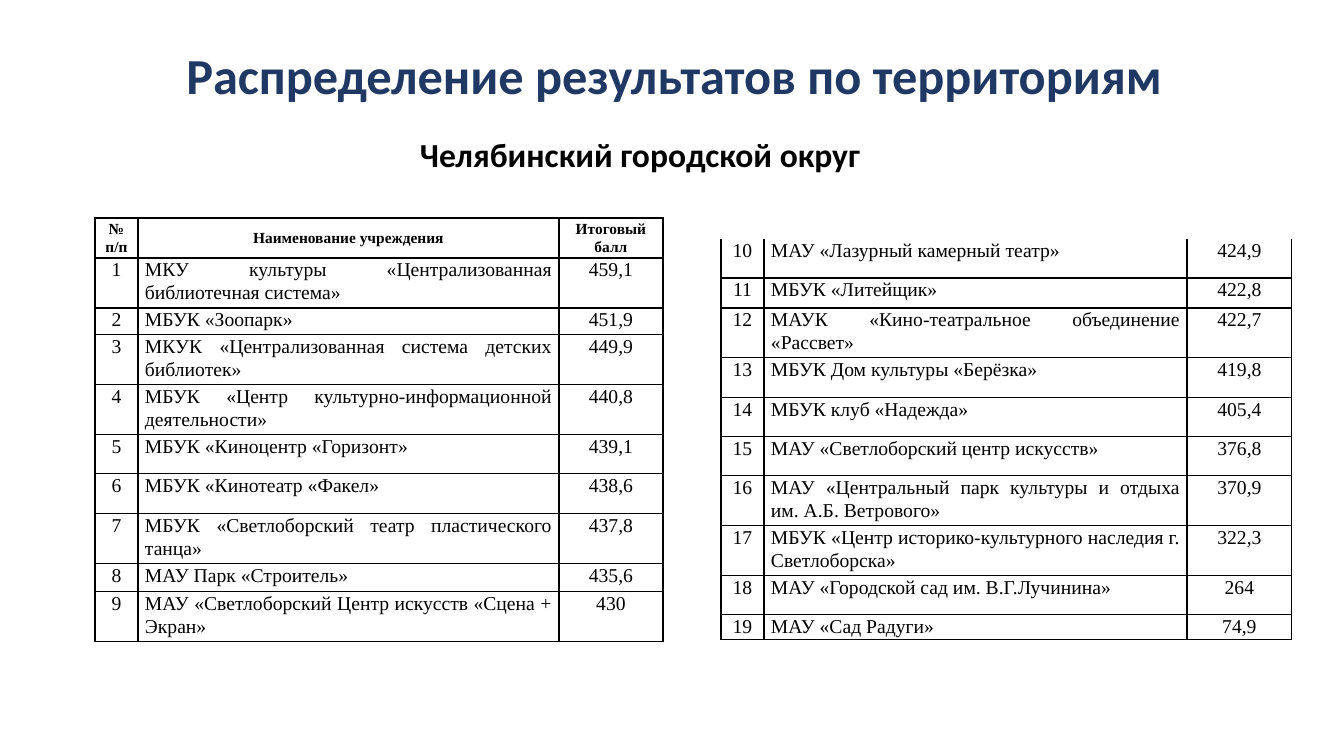
from pptx import Presentation
from pptx.dml.color import RGBColor
from pptx.enum.text import MSO_ANCHOR, PP_ALIGN
from pptx.util import Pt
from pptx.oxml import parse_xml
from pptx.oxml.ns import nsdecls

PX = 914400 / 100.8
NAVY = RGBColor(0x20, 0x38, 0x64)
BLACK = RGBColor(0, 0, 0)
SERIF = "Times New Roman"


def px(n):
    return round(n * PX)


def write(frame, text, size=14, font=SERIF, color=BLACK, bold=False,
          align=PP_ALIGN.CENTER, lead=1.06, before=0):
    para = frame.paragraphs[0]
    para.alignment = align
    para.line_spacing = lead
    para.space_before = Pt(before)
    run = para.add_run()
    run.text = text
    run.font.size = Pt(size)
    run.font.name = font
    run.font.bold = bold
    run.font.color.rgb = color


deck = Presentation()
deck.slide_width, deck.slide_height = px(1344), px(756)
slide = deck.slides.add_slide(deck.slide_layouts[6])

# Title and subtitle
heads = [
    ("Распределение результатов по территориям", (95, 35, 1159, 87),
     MSO_ANCHOR.MIDDLE, 36, NAVY, 0),
    ("Челябинский городской округ", (144, 120, 992, 60),
     MSO_ANCHOR.BOTTOM, 24, BLACK, 10),
]
for text, place, anchor, size, color, before in heads:
    frame = slide.shapes.add_textbox(*map(px, place)).text_frame
    frame.word_wrap = True
    frame.vertical_anchor = anchor
    write(frame, text, size=size, font="Calibri", color=color, bold=True,
          lead=0.9, before=before)

# Rows: height, number, name, score
left = [
    (40, "№ п/п", "Наименование учреждения", "Итоговый балл"),
    (50, "1", "МКУ культуры «Централизованная библиотечная система»", "459,1"),
    (27, "2", "МБУК «Зоопарк»", "451,9"),
    (50, "3", "МКУК «Централизованная система детских библиотек»", "449,9"),
    (49, "4", "МБУК «Центр культурно-информационной деятельности»", "440,8"),
    (39, "5", "МБУК «Киноцентр «Горизонт»", "439,1"),
    (40, "6", "МБУК «Кинотеатр «Факел»", "438,6"),
    (49, "7", "МБУК «Светлоборский театр пластического танца»", "437,8"),
    (28, "8", "МАУ Парк «Строитель»", "435,6"),
    (50, "9", "МАУ «Светлоборский Центр искусств «Сцена + Экран»", "430"),
]
right = [
    (39, "10", "МАУ «Лазурный камерный театр»", "424,9"),
    (30, "11", "МБУК «Литейщик»", "422,8"),
    (50, "12", "МАУК «Кино-театральное объединение «Рассвет»", "422,7"),
    (40, "13", "МБУК Дом культуры «Берёзка»", "419,8"),
    (39, "14", "МБУК клуб «Надежда»", "405,4"),
    (39, "15", "МАУ «Светлоборский центр искусств»", "376,8"),
    (50, "16", "МАУ «Центральный парк культуры и отдыха им. А.Б. Ветрового»",
     "370,9"),
    (50, "17", "МБУК «Центр историко-культурного наследия г. Светлоборска»",
     "322,3"),
    (39, "18", "МАУ «Городской сад им. В.Г.Лучинина»", "264"),
    (25, "19", "МАУ «Сад Радуги»", "74,9"),
]

# Score tables: the right one carries on without a header or top edge
LINE = '<a:solidFill><a:srgbClr val="000000"/></a:solidFill>'
for x, y, widths, rows, header in [
    (95, 218, (43, 421, 104), left, True),
    (721, 239, (43, 423, 105), right, False),
]:
    high = sum(row[0] for row in rows)
    table = slide.shapes.add_table(
        len(rows), 3, px(x), px(y), px(sum(widths)), px(high)).table
    table.first_row = header
    table.horz_banding = False
    for col, width in zip(table.columns, widths):
        col.width = px(width)
    for r, (height, *texts) in enumerate(rows):
        table.rows[r].height = px(height)
        top = header and r == 0
        for c, text in enumerate(texts):
            cell = table.cell(r, c)
            cell.margin_left = cell.margin_right = px(7)
            cell.margin_top = cell.margin_bottom = 0
            cell.vertical_anchor = MSO_ANCHOR.MIDDLE if top else MSO_ANCHOR.TOP
            justify = c == 1 and not top
            write(cell.text_frame, text, size=11 if top else 14, bold=top,
                  align=PP_ALIGN.JUSTIFY if justify else PP_ALIGN.CENTER)
            # Borders come before the fill in the cell properties
            props = cell._tc.get_or_add_tcPr()
            for side in "LRTB":
                bare = side == "T" and r == 0 and not header
                fill = "<a:noFill/>" if bare else LINE
                props.append(parse_xml(
                    f'<a:ln{side} {nsdecls("a")} w="12700">{fill}</a:ln{side}>'))
            cell.fill.background()

deck.save("out.pptx")
